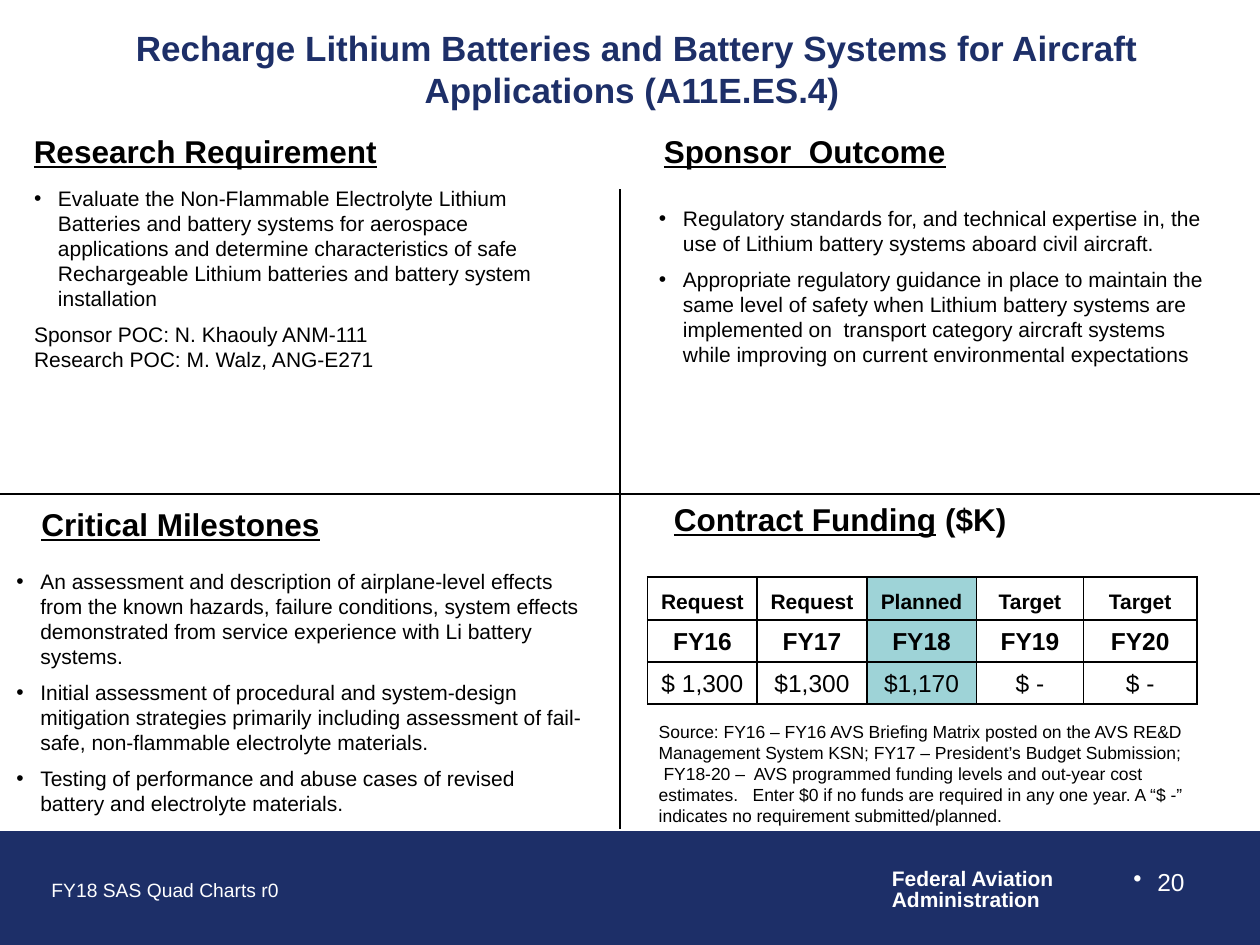
"""Build the quad chart slide on lithium battery research."""
from dataclasses import dataclass
from typing import Any

from lxml.etree import SubElement
from pptx import Presentation
from pptx.dml.color import RGBColor
from pptx.enum.shapes import MSO_CONNECTOR as Connector, MSO_SHAPE as Shape
from pptx.enum.text import MSO_ANCHOR as Anchor, MSO_AUTO_SIZE as AutoSize, PP_ALIGN as Align
from pptx.oxml import parse_xml
from pptx.oxml.ns import nsdecls, qn
from pptx.util import Emu, Inches, Pt

NAVY, TEAL, BLACK, WHITE = "1D2F68", "9ED3D7", "000000", "FFFFFF"
FONT = "Arial"
INDENT = Inches(0.19)

presentation = Presentation()
presentation.slide_width, presentation.slide_height = Inches(10), Inches(7.5)
slide = presentation.slides.add_slide(presentation.slide_layouts[4])


@dataclass(frozen=True)
class Box:
    """A place given in percent of the slide's width and height."""
    left: float
    top: float
    width: float
    height: float

    def lengths(self) -> tuple[Emu, Emu, Emu, Emu]:
        return (across(self.left), down(self.top), across(self.width), down(self.height))


@dataclass(frozen=True)
class Style:
    """The look of one piece of text."""
    size: float
    color: str = BLACK
    bold: bool = False
    underline: bool = False
    align: Any = Align.LEFT


@dataclass(frozen=True)
class BulletList:
    """A quadrant's list, with optional plain lines below the bullets."""
    placeholder: int
    box: Box
    bullets: tuple[str, ...]
    plain: tuple[str, ...] = ()


@dataclass(frozen=True)
class Label:
    """A free text box."""
    box: Box
    style: Style
    lines: tuple[str, ...]
    spacing: float = 1.0
    wrap: bool = True
    bullet: bool = False


HEADING = Style(18, bold=True, underline=True)
BODY = Style(12)

LISTS = (
    BulletList(2, Box(1.7, 18.93, 44.2, 29.33), (
        "Evaluate the Non-Flammable Electrolyte Lithium Batteries and battery systems for "
        "aerospace applications and determine characteristics of safe Rechargeable Lithium "
        "batteries and battery system installation",
    ), ("Sponsor POC: N. Khaouly ANM-111", "Research POC: M. Walz, ANG-E271")),
    BulletList(4, Box(51.3, 21.07, 45.3, 18.8), (
        "Regulatory standards for, and technical expertise in, the use of Lithium battery "
        "systems aboard civil aircraft.",
        "Appropriate regulatory guidance in place to maintain the same level of safety when "
        "Lithium battery systems are implemented on  transport category aircraft systems "
        "while improving on current environmental expectations",
    )),
    BulletList(1, Box(0.3, 59.47, 47, 28.27), (
        "An assessment and description of airplane-level effects from the known hazards, "
        "failure conditions, system effects demonstrated from service experience with Li "
        "battery systems.",
        "Initial assessment of procedural and system-design mitigation strategies primarily "
        "including assessment of fail-safe, non-flammable electrolyte materials.",
        "Testing of performance and abuse cases of revised battery and electrolyte materials.",
    )),
)

LABELS = (
    Label(Box(69.8, 91.33, 15, 5.87), Style(12, WHITE, bold=True),
          ("Federal Aviation", "Administration"), spacing=0.85, wrap=False),
    Label(Box(2.3, 52.8, 45, 5.07), HEADING, ("Critical Milestones",)),
    Label(Box(51.7, 13.33, 46.7, 4.4), HEADING, ("Sponsor  Outcome",)),
    Label(Box(1.7, 13.33, 50, 4.4), HEADING, ("Research Requirement",)),
    Label(Box(71.7, 91.07, 23.3, 6.93), Style(14, WHITE, align=Align.RIGHT), ("20",), bullet=True),
    Label(Box(3.1, 92.27, 20.2, 3.87), Style(11, WHITE), ("FY18 SAS Quad Charts r0",), wrap=False),
    Label(Box(51.3, 75.6, 43.7, 15.87), Style(10), (
        "Source: FY16 – FY16 AVS Briefing Matrix posted on the AVS RE&D Management System KSN; "
        "FY17 – President’s Budget Submission;  FY18-20 –  AVS programmed funding levels and "
        "out-year cost estimates.   Enter $0 if no funds are required in any one year. "
        "A “$ -” indicates no requirement submitted/planned.",
    )),
)

FUNDING = (
    (Style(12, bold=True, align=Align.CENTER), 0.34,
     ("Request", "Request", "Planned", "Target", "Target")),
    (Style(14, bold=True, align=Align.CENTER), 0.33, ("FY16", "FY17", "FY18", "FY19", "FY20")),
    (Style(14, align=Align.CENTER), 0.33, ("$ 1,300", "$1,300", "$1,170", "$ -", "$ -")),
)
FUNDING_WIDTHS = (0.87, 0.87, 0.87, 0.85, 0.9)
PLANNED_COLUMN = 2


def across(percent: float) -> Emu:
    """Return a share of the slide's width."""
    return Emu(round(presentation.slide_width * percent / 100))


def down(percent: float) -> Emu:
    """Return a share of the slide's height."""
    return Emu(round(presentation.slide_height * percent / 100))


def paint(color_holder: Any, color: str) -> None:
    """Give a fill a solid colour."""
    color_holder.solid()
    color_holder.fore_color.rgb = RGBColor.from_string(color)


def format_paragraph(paragraph: Any, style: Style, spacing: float = 1.0, before: float = 0) -> None:
    """Apply a style to a paragraph and its runs."""
    paragraph.alignment = style.align
    paragraph.line_spacing = spacing
    paragraph.space_before = Pt(before)
    for run in paragraph.runs:
        font = run.font
        font.name, font.size = FONT, Pt(style.size)
        font.bold, font.underline = style.bold, style.underline
        font.color.rgb = RGBColor.from_string(style.color)


def set_bullet(paragraph: Any, shown: bool) -> None:
    """Turn a paragraph's bullet and hanging indent on or off."""
    properties = paragraph._p.get_or_add_pPr()
    properties.set("marL", str(INDENT if shown else 0))
    properties.set("indent", str(-INDENT if shown else 0))
    if shown:
        SubElement(properties, qn("a:buChar")).set("char", "•")
    else:
        SubElement(properties, qn("a:buNone"))


def place(shape: Any, box: Box, anchor: Any) -> Any:
    """Move a placeholder and return its text frame."""
    shape.left, shape.top, shape.width, shape.height = box.lengths()
    frame = shape.text_frame
    frame.auto_size, frame.vertical_anchor, frame.word_wrap = AutoSize.NONE, anchor, True
    return frame


def draw_list(content: BulletList) -> None:
    """Fill a body placeholder with a bulleted list."""
    frame = place(slide.placeholders[content.placeholder], content.box, Anchor.TOP)
    frame.text = "\n".join(content.bullets + content.plain)
    bullet_count = len(content.bullets)
    for index, paragraph in enumerate(frame.paragraphs):
        set_bullet(paragraph, index < bullet_count)
        format_paragraph(paragraph, BODY, before=6 if 0 < index <= bullet_count else 0)


def draw_label(label: Label) -> Any:
    """Draw a text box and return its text frame."""
    frame = slide.shapes.add_textbox(*label.box.lengths()).text_frame
    frame.word_wrap = label.wrap
    frame.text = "\n".join(label.lines)
    for paragraph in frame.paragraphs:
        if label.bullet:
            set_bullet(paragraph, True)
        format_paragraph(paragraph, label.style, label.spacing)
    return frame


def draw_rule(left: float, top: float, right: float, bottom: float) -> None:
    """Draw a thin black dividing line."""
    rule = slide.shapes.add_connector(
        Connector.STRAIGHT, across(left), down(top), across(right), down(bottom))
    paint(rule.line.fill, BLACK)
    rule.line.width = Pt(0.75)
    SubElement(rule._element.spPr, qn("a:effectLst"))


def draw_funding(box: Box) -> None:
    """Draw the funding table."""
    table = slide.shapes.add_table(len(FUNDING), len(FUNDING_WIDTHS), *box.lengths()).table
    table.first_row = table.horz_banding = False
    for column, width in zip(table.columns, FUNDING_WIDTHS):
        column.width = Inches(width)
    for row, (style, height, values) in zip(table.rows, FUNDING):
        row.height = Inches(height)
        for index, (cell, value) in enumerate(zip(row.cells, values)):
            cell.text_frame.text = value
            cell.vertical_anchor = Anchor.BOTTOM
            format_paragraph(cell.text_frame.paragraphs[0], style)
            paint(cell.fill, TEAL if index == PLANNED_COLUMN else WHITE)
            for position, side in enumerate(("lnL", "lnR", "lnT", "lnB")):
                cell._tc.get_or_add_tcPr().insert(position, parse_xml(
                    f'<a:{side} {nsdecls("a")} w="{Pt(1)}"><a:solidFill>'
                    f'<a:srgbClr val="{BLACK}"/></a:solidFill></a:{side}>'))


def main() -> None:
    """Draw the slide and save it."""
    band = slide.shapes.add_shape(Shape.RECTANGLE, *Box(0, 88, 100, 12).lengths())
    band.shadow.inherit = False
    paint(band.fill, NAVY)
    paint(band.line.fill, NAVY)
    band.line.width = Pt(0.75)

    title = place(slide.shapes.title, Box(4.2, 1.73, 92.7, 11.07), Anchor.MIDDLE)
    title.text = ("Recharge Lithium Batteries and Battery Systems for Aircraft "
                  "Applications (A11E.ES.4) ")
    format_paragraph(title.paragraphs[0], Style(20, NAVY, bold=True, align=Align.CENTER))

    for content in LISTS:
        draw_list(content)
    unused = slide.placeholders[3]._element
    unused.getparent().remove(unused)
    for label in LABELS:
        draw_label(label)

    funding = draw_label(Label(Box(52.5, 52.27, 44.2, 7.2), HEADING, ("Contract Funding",)))
    heading = funding.paragraphs[0]
    heading.add_run().text = " ($K)"
    format_paragraph(heading, HEADING)
    heading.runs[1].font.underline = False

    draw_rule(49.2, 20, 49.2, 87.73)
    draw_rule(0, 52.27, 100, 52.27)
    draw_funding(Box(51.4, 61.07, 43.6, 13.33))
    presentation.save("out.pptx")


if __name__ == "__main__":
    main()
